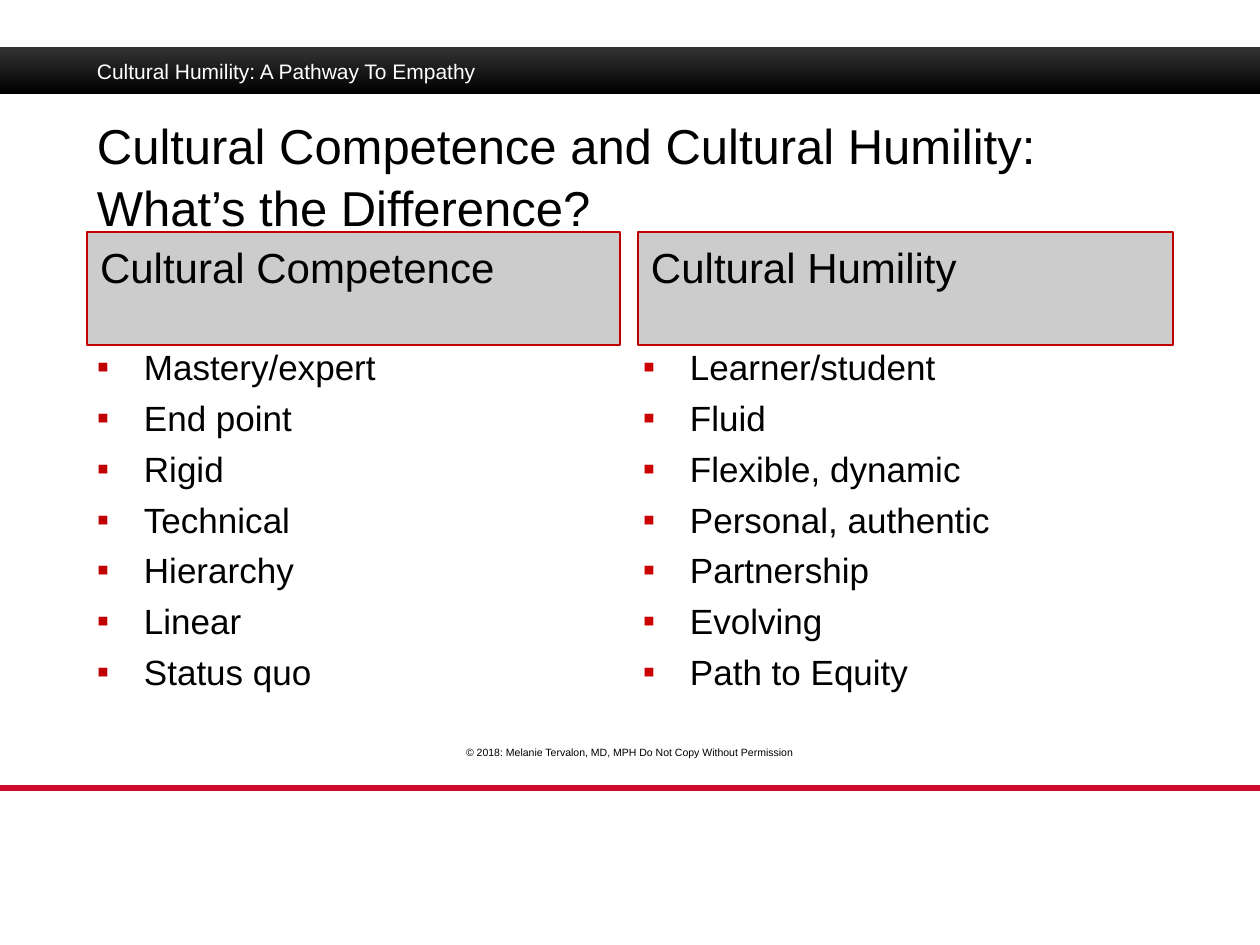
from lxml import etree
from pptx import Presentation
from pptx.dml.color import RGBColor
from pptx.enum.shapes import MSO_CONNECTOR, MSO_SHAPE
from pptx.enum.text import MSO_ANCHOR, MSO_AUTO_SIZE, PP_ALIGN
from pptx.oxml.ns import qn
from pptx.util import Emu, Pt

RECTANGLE = MSO_SHAPE.RECTANGLE
STRAIGHT = MSO_CONNECTOR.STRAIGHT
TOP = MSO_ANCHOR.TOP
NO_AUTO_SIZE = MSO_AUTO_SIZE.NONE
LEFT, CENTER = PP_ALIGN.LEFT, PP_ALIGN.CENTER

PX_PER_INCH = 126
SLIDE_WIDTH, SLIDE_HEIGHT = 1260, 945
FONT = "Arial"
COLORS = {
    "white": "FFFFFF",
    "black": "000000",
    "bar_top": "333333",
    "heading_fill": "CCCCCC",
    "heading_line": "C00000",
    "left_bullet": "C00000",
    "right_bullet": "CC0000",
    "rule": "CF0A2C",
}
COLUMNS = [
    {
        "heading": "Cultural Competence",
        "heading_box": (87, 232, 533, 113),
        "list_box": (84, 340, 538, 380),
        "bullet": "left_bullet",
        "items": ["Mastery/expert", "End point", "Rigid", "Technical",
                  "Hierarchy", "Linear", "Status quo"],
    },
    {
        "heading": "Cultural Humility",
        "heading_box": (638, 232, 535, 113),
        "list_box": (630, 340, 538, 380),
        "bullet": "right_bullet",
        "items": ["Learner/student", "Fluid", "Flexible, dynamic",
                  "Personal, authentic", "Partnership", "Evolving",
                  "Path to Equity"],
    },
]


def px(length):
    return Emu(round(length * 914400 / PX_PER_INCH))


def box_px(box):
    return [px(length) for length in box]


def color(name):
    return RGBColor.from_string(COLORS[name])


def format_frame(frame, margin_top=6):
    values = {
        "word_wrap": True,
        "auto_size": NO_AUTO_SIZE,
        "vertical_anchor": TOP,
        "margin_left": px(13),
        "margin_right": px(13),
        "margin_top": px(margin_top),
        "margin_bottom": px(6),
    }
    for name, value in values.items():
        setattr(frame, name, value)


def write_paragraph(paragraph, text, size, color_name="black", **layout):
    """Fill a paragraph; layout holds paragraph attributes such as alignment."""
    paragraph.text = text
    for name, value in {"alignment": LEFT, **layout}.items():
        setattr(paragraph, name, value)
    for run in paragraph.runs:
        for name, value in {"name": FONT, "size": Pt(size), "bold": False}.items():
            setattr(run.font, name, value)
        run.font.color.rgb = color(color_name)


def add_text(slide, box, text, size, color_name="black", **layout):
    frame = slide.shapes.add_textbox(*box_px(box)).text_frame
    format_frame(frame)
    write_paragraph(frame.paragraphs[0], text, size, color_name, **layout)


def add_bullet(paragraph, color_name, indent):
    properties = paragraph._p.get_or_add_pPr()
    properties.set("marL", str(px(indent)))
    properties.set("indent", str(-px(indent)))
    bullet_color = etree.SubElement(properties, qn("a:buClr"))
    etree.SubElement(bullet_color, qn("a:srgbClr"), val=COLORS[color_name])
    etree.SubElement(properties, qn("a:buFont"), typeface=FONT)
    etree.SubElement(properties, qn("a:buChar"), char="▪")


def add_header(slide, box):
    left, top, width, height = box
    bar = slide.shapes.add_shape(RECTANGLE, *box_px(box))
    bar.shadow.inherit = False
    bar.line.fill.background()
    bar.fill.gradient()
    bar.fill.gradient_angle = 270
    for stop, name in zip(bar.fill.gradient_stops, ("bar_top", "black")):
        stop.color.rgb = color(name)
    add_text(slide, (left + 84, top + 6, 703, height - 6),
             "Cultural Humility: A Pathway To Empathy", 12, "white")


def set_title(slide, box):
    title = slide.shapes.title
    title.left, title.top, title.width, title.height = box_px(box)
    format_frame(title.text_frame)
    write_paragraph(
        title.text_frame.paragraphs[0],
        "Cultural Competence and Cultural Humility:\vWhat’s the Difference?",
        28, line_spacing=1.05)


def add_heading(slide, box, text):
    heading = slide.shapes.add_shape(RECTANGLE, *box_px(box))
    heading.shadow.inherit = False
    heading.fill.solid()
    heading.fill.fore_color.rgb = color("heading_fill")
    heading.line.color.rgb = color("heading_line")
    heading.line.width = Pt(0.75)
    format_frame(heading.text_frame, margin_top=10)
    write_paragraph(heading.text_frame.paragraphs[0], text, 24)


def add_bullet_list(slide, box, items, bullet_color):
    frame = slide.shapes.add_textbox(*box_px(box)).text_frame
    format_frame(frame)
    for index, item in enumerate(items):
        paragraph = frame.add_paragraph() if index else frame.paragraphs[0]
        write_paragraph(paragraph, item, 20, space_before=Pt(5 if index else 0))
        add_bullet(paragraph, bullet_color, 47)


def add_footer(slide, box):
    left, top, width, height = box
    add_text(slide, (left + 339, top, 581, 25),
             "© 2018: Melanie Tervalon, MD, MPH Do Not Copy Without Permission",
             6, alignment=CENTER)
    bottom = top + height
    rule = slide.shapes.add_connector(
        STRAIGHT, *box_px((left, bottom, left + width, bottom)))
    rule.line.color.rgb = color("rule")
    rule.line.width = Pt(3)
    etree.SubElement(rule._element.spPr, qn("a:effectLst"))


def main():
    presentation = Presentation()
    presentation.slide_width = px(SLIDE_WIDTH)
    presentation.slide_height = px(SLIDE_HEIGHT)
    slide = presentation.slides.add_slide(presentation.slide_layouts[5])
    add_header(slide, (0, 47, SLIDE_WIDTH, 47))
    set_title(slide, (84, 107, 1092, 125))
    for column in COLUMNS:
        add_heading(slide, column["heading_box"], column["heading"])
        add_bullet_list(slide, column["list_box"], column["items"], column["bullet"])
    add_footer(slide, (0, 740, SLIDE_WIDTH, 48))
    presentation.save("out.pptx")


if __name__ == "__main__":
    main()
